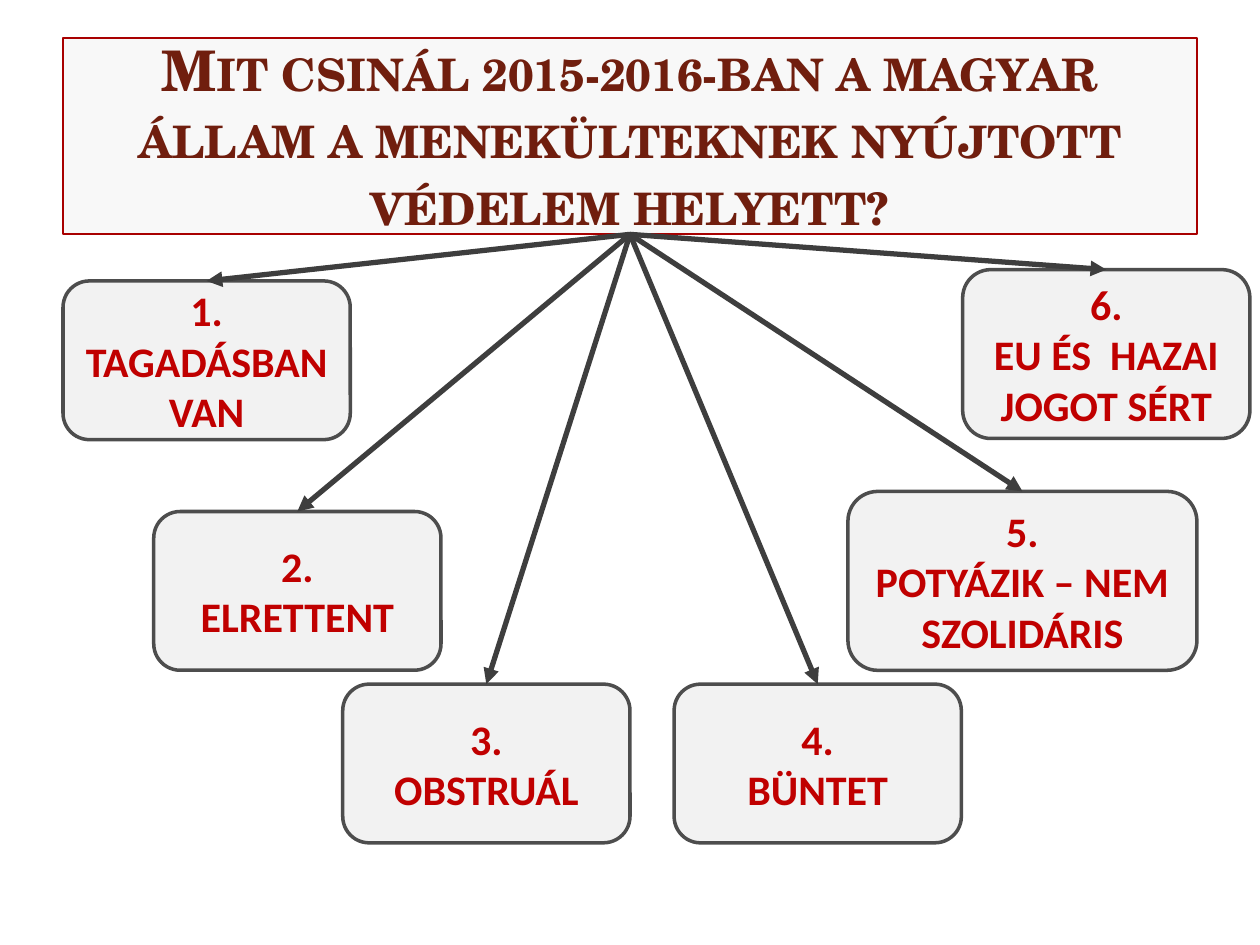
from dataclasses import dataclass

from lxml import etree
from pptx import Presentation
from pptx import util as u
from pptx.dml.color import RGBColor
from pptx.enum import shapes, text
from pptx.oxml import ns


@dataclass(frozen=True)
class Theme:
    title_font: str = "TeX Gyre Schola"
    body_font: str = "Calibri"
    title_size: int = 32
    body_size: int = 24
    title_color: str = "701E0E"
    title_fill: str = "F8F8F8"
    title_line: str = "A80000"
    body_color: str = "C00000"
    box_fill: str = "F2F2F2"
    box_line: str = "4D4D4D"
    arrow: str = "3E3E3E"


theme = Theme()


def add_box(kind, bounds, fill, line, line_width):
    shape = slide.shapes.add_shape(kind, *(u.Inches(value) for value in bounds))
    shape.shadow.inherit = False
    shape.fill.solid()
    shape.fill.fore_color.rgb = RGBColor.from_string(fill)
    shape.line.color.rgb = RGBColor.from_string(line)
    shape.line.width = u.Pt(line_width)
    return shape


def write(shape, lines, *, font, size, color, small_caps=False):
    """Fill a shape with bold, centred paragraphs."""
    frame = shape.text_frame
    frame.word_wrap = True
    frame.vertical_anchor = text.MSO_ANCHOR.MIDDLE
    for index, line in enumerate(lines):
        paragraph = frame.add_paragraph() if index else frame.paragraphs[0]
        paragraph.alignment = text.PP_ALIGN.CENTER
        run = paragraph.add_run()
        run.text = line
        run.font.name = font
        run.font.size = u.Pt(size)
        run.font.bold = True
        run.font.color.rgb = RGBColor.from_string(color)
        if small_caps:
            run.font._element.set("cap", "small")


presentation = Presentation()
presentation.slide_width = u.Inches(10)
presentation.slide_height = u.Inches(7.5)
slide = presentation.slides.add_slide(presentation.slide_layouts[6])

title = add_box(shapes.MSO_SHAPE.RECTANGLE, (0.5, 0.3, 9, 1.56),
                theme.title_fill, theme.title_line, 1.25)
write(title,
      ["Mit csinál 2015-2016-ban a magyar állam a menekülteknek nyújtott védelem helyett?"],
      font=theme.title_font, size=theme.title_size, color=theme.title_color,
      small_caps=True)

# Left, top, width, height and wording of each answer, in numbered order
answers = [
    (0.5, 2.23, 2.28, 1.26, "TAGADÁSBAN VAN"),
    (1.22, 4.06, 2.28, 1.26, "ELRETTENT"),
    (2.72, 5.43, 2.28, 1.26, "OBSTRUÁL"),
    (5.35, 5.43, 2.28, 1.26, "BÜNTET"),
    (6.73, 3.9, 2.77, 1.42, "POTYÁZIK – NEM SZOLIDÁRIS"),
    (7.64, 2.14, 2.28, 1.34, "EU ÉS  HAZAI JOGOT SÉRT"),
]
for number, (*bounds, answer) in enumerate(answers, start=1):
    box = add_box(shapes.MSO_SHAPE.ROUNDED_RECTANGLE, bounds,
                  theme.box_fill, theme.box_line, 2)
    write(box, [f"{number}.", answer],
          font=theme.body_font, size=theme.body_size, color=theme.body_color)

    arrow = slide.shapes.add_connector(shapes.MSO_CONNECTOR.STRAIGHT, 0, 0, 0, 0)
    arrow.begin_connect(title, 2)
    arrow.end_connect(box, 0)
    arrow.line.color.rgb = RGBColor.from_string(theme.arrow)
    arrow.line.width = u.Pt(3)
    properties = arrow._element.spPr
    etree.SubElement(properties.find(ns.qn("a:ln")), ns.qn("a:tailEnd"), type="triangle")
    etree.SubElement(properties, ns.qn("a:effectLst"))

presentation.save("out.pptx")
